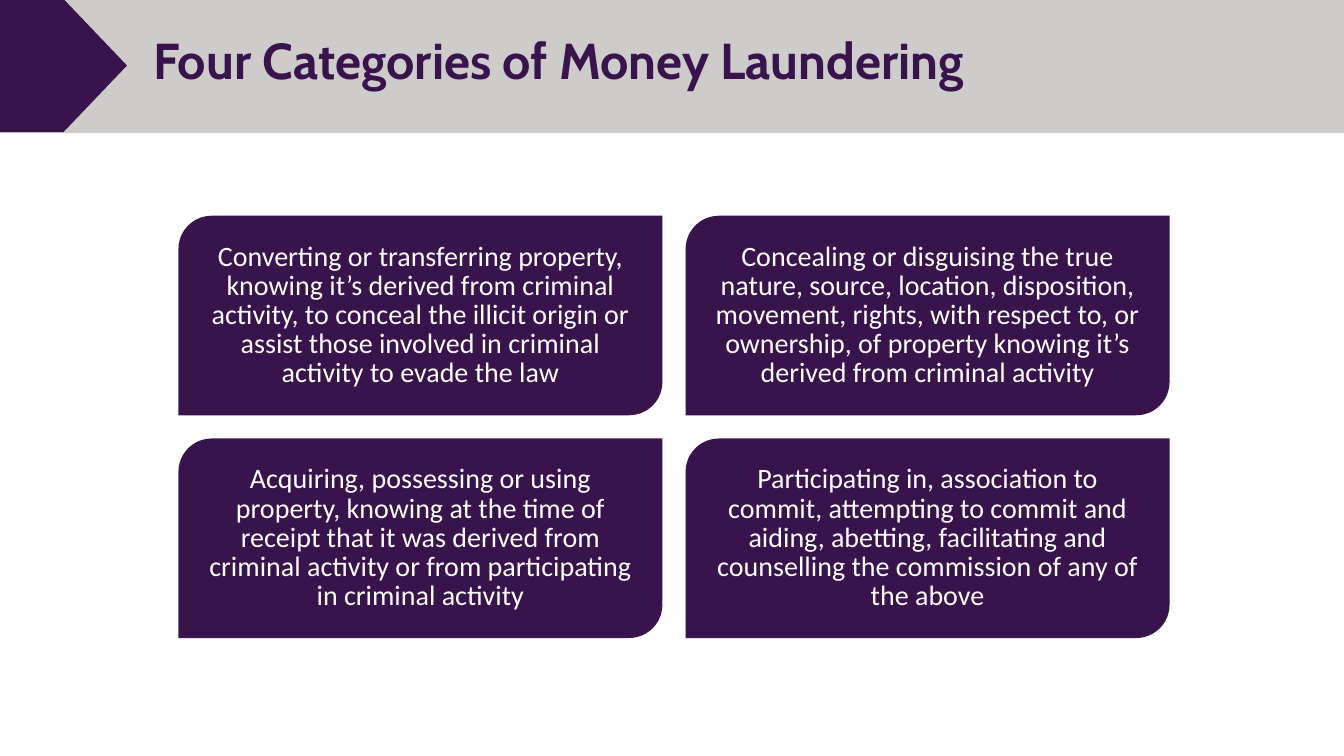
from pptx import Presentation
from pptx.dml.color import RGBColor
from pptx.enum.shapes import MSO_SHAPE as Shape
from pptx.enum.text import MSO_ANCHOR as Anchor, MSO_AUTO_SIZE as AutoSize, PP_ALIGN as Align
from pptx.util import Inches, Pt


def color(hex_text):
    return RGBColor.from_string(hex_text)


class CategorySlide:
    purple, gray, white = "39134C", "CDCCCB", "FFFFFF"
    title_font, body_font = "Cabin", "Calibri"
    grid_left, grid_top = 1.77, 2.14
    card_width, card_height, gap = 4.8, 1.98, 0.23

    def __init__(self, presentation):
        self.slide = presentation.slides.add_slide(presentation.slide_layouts[5])

    def add_text(self, paragraph, text, font_name, size, hex_text, bold=False):
        run = paragraph.add_run()
        run.text = text
        run.font.name = font_name
        run.font.size = Pt(size)
        run.font.bold = bold
        run.font.color.rgb = color(hex_text)

    def block(self, kind, left, top, width, height, fill):
        shape = self.slide.shapes.add_shape(
            kind, Inches(left), Inches(top), Inches(width), Inches(height))
        shape.shadow.inherit = False
        shape.fill.solid()
        shape.fill.fore_color.rgb = color(fill)
        shape.line.fill.background()
        return shape

    def banner(self):
        self.block(Shape.RECTANGLE, 0, 0, 13.33, 1.32, self.gray)
        self.block(Shape.PENTAGON, 0, -0.01, 1.26, 1.32, self.purple)

    def title(self, text):
        title = self.slide.shapes.title
        title.left, title.top = Inches(1.42), Inches(0.35)
        title.width, title.height = Inches(10.88), Inches(0.56)
        self.slide.shapes._spTree.append(title._element)
        frame = title.text_frame
        frame.word_wrap = True
        frame.auto_size = AutoSize.NONE
        frame.vertical_anchor = Anchor.MIDDLE
        paragraph = frame.paragraphs[0]
        paragraph.alignment = Align.LEFT
        paragraph.line_spacing = 0.9
        self.add_text(paragraph, text, self.title_font, 36, self.purple, bold=True)

    def card(self, column, row, text):
        left = self.grid_left + column * (self.card_width + self.gap)
        top = self.grid_top + row * (self.card_height + self.gap)
        shape = self.block(Shape.ROUND_2_DIAG_RECTANGLE, left, top,
                           self.card_width, self.card_height, self.purple)
        frame = shape.text_frame
        frame.word_wrap = True
        frame.vertical_anchor = Anchor.MIDDLE
        frame.margin_left = frame.margin_right = Inches(0.16)
        frame.margin_top = frame.margin_bottom = Inches(0.16)
        paragraph = frame.paragraphs[0]
        paragraph.alignment = Align.CENTER
        paragraph.line_spacing = Pt(20.8)
        self.add_text(paragraph, text, self.body_font, 20, self.white)


CATEGORIES = [
    "Converting or transferring property, knowing it’s derived from criminal activity, "
    "to conceal the illicit origin or assist those involved in criminal activity to evade the law",
    "Concealing or disguising the true nature, source, location, disposition, movement, rights, "
    "with respect to, or ownership, of property knowing it’s derived from criminal activity",
    "Acquiring, possessing or using property, knowing at the time of receipt that it was derived "
    "from criminal activity or from participating in criminal activity",
    "Participating in, association to commit, attempting to commit and aiding, abetting, "
    "facilitating and counselling the commission of any of the above",
]


def main():
    presentation = Presentation()
    presentation.slide_width, presentation.slide_height = Inches(13.33), Inches(7.5)
    page = CategorySlide(presentation)
    page.banner()
    page.title("Four Categories of Money Laundering")
    for index, text in enumerate(CATEGORIES):
        row, column = divmod(index, 2)
        page.card(column, row, text)
    presentation.save("out.pptx")


if __name__ == "__main__":
    main()
